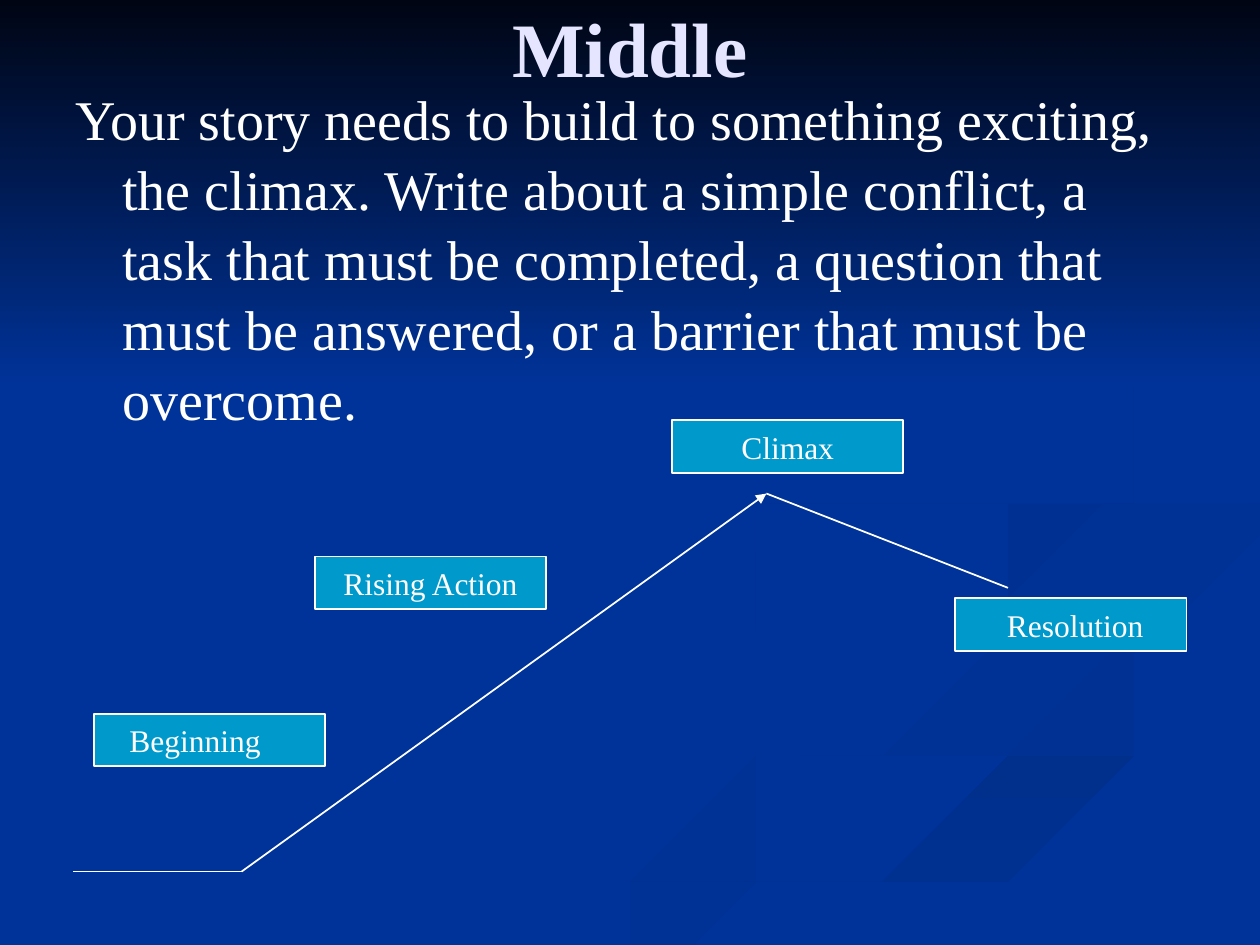
from lxml import etree
from pptx import Presentation
from pptx import util as u
from pptx.dml.color import RGBColor
from pptx.enum import shapes, text
from pptx.oxml.ns import qn

FONT = "Times New Roman"
WHITE = "FFFFFF"
BLUE = "003399"
STEPS = 5

RIBBONS = [
    (BLUE, "003193", 0, [
        (7.8, 5.53), (6.42, 5.07), (5.75, 4.6), (5.81, 4.84), (6.8, 5.19),
        (7.81, 5.56), (7.67, 5.87), (6.16, 6.29), (4.58, 6.74), (3, 7.49),
        (3.61, 7.49), (5.32, 6.74), (7.4, 6.18), (8, 5.81)]),
    (BLUE, "003193", 45, [
        (9.43, 5.7), (9.05, 5.4), (7.74, 5.03), (7.24, 4.64), (7.55, 5.05),
        (8.54, 5.39), (9.18, 5.81), (8.94, 6.05), (9.37, 5.86)]),
    ("002F8C", BLUE, 90, [
        (5.03, 7.49), (5.71, 7.49), (7.22, 6.82), (9.98, 6.09), (9.98, 5.81),
        (8.31, 6.29), (6.3, 6.93)]),
    ("003091", BLUE, 45, [
        (7.81, 4.6), (8.26, 4.96), (8.09, 4.66), (8.78, 4.39), (9.98, 4.2),
        (9.98, 4.02), (8.35, 4.3)]),
    ("002F8E", BLUE, 45, [
        (6.83, 4.3), (8.25, 4.02), (8.92, 3.54), (8.73, 2.99), (7.62, 2.33),
        (8.62, 2.92), (8.86, 3.48), (7.91, 3.92), (6.25, 4.26), (5.77, 4.62),
        (6.22, 5), (5.94, 4.65)]),
]

STAGES = [
    ("Beginning", 1.9, 14.39, 0.71),
    ("Rising Action", 6.35, 11.22, None),
    ("Climax", 13.55, 8.47, None),
    ("Resolution", 19.26, 12.06, 1.04),
]

START, TURN, PEAK, END = (1.48, 17.57), (4.87, 17.57), (15.45, 9.95), (20.32, 11.85)

STORY = ("Your story needs to build to something exciting, the climax. "
         "Write about a simple conflict, a task that must be completed, "
         "a question that must be answered, or a barrier that must be overcome.")


def color(value):
    return RGBColor.from_string(value)


def apply(target, values):
    for name, value in values.items():
        setattr(target, name, value)


def write(box, words, size, tint=WHITE, bold=False, **layout):
    frame = box.text_frame
    apply(frame, {"word_wrap": True, **layout})
    para = frame.paragraphs[0]
    span = para.add_run()
    span.text = words
    apply(span.font, {"name": FONT, "size": u.Pt(size), "bold": bold})
    span.font.color.rgb = color(tint)
    return para


def blend(a, b, c, d, t):
    return (b + t * (c - a) / 2 + t ** 2 * (2 * a - 5 * b + 4 * c - d) / 2
            + t ** 3 * (3 * b - a - 3 * c + d) / 2)


def smooth_loop(points):
    count = len(points)
    curve = []
    for i in range(count):
        near = [points[(i + k) % count] for k in (-1, 0, 1, 2)]
        for step in range(STEPS):
            x, y = (blend(*axis, step / STEPS) for axis in zip(*near))
            curve.append((min(x, 10), min(y, 7.5)))
    return curve


def shade(shape, first, last, angle):
    shape.shadow.inherit = False
    shape.line.fill.background()
    shape.fill.gradient()
    shape.fill.gradient_angle = -angle % 360
    for stop, tint in zip(shape.fill.gradient_stops, (first, last)):
        stop.color.rgb = color(tint)


def add_ribbon(page, first, last, angle, points):
    curve = smooth_loop(points)
    builder = page.shapes.build_freeform(*curve[0], scale=u.Cm(2.54))
    builder.add_line_segments(curve[1:], close=True)
    shade(builder.convert_to_shape(), first, last, angle)


def add_sky(page):
    sky = page.shapes.add_shape(shapes.MSO_SHAPE.RECTANGLE, 0, 0,
                                u.Cm(25.4), u.Cm(7.82))
    shade(sky, "000514", BLUE, 90)


def add_title(page, words):
    title = page.shapes.title
    title.element.getparent().append(title.element)
    apply(title, {"left": u.Cm(1.27), "top": u.Cm(-0.64),
                  "width": u.Cm(22.86), "height": u.Cm(3.18)})
    para = write(title, words, 44, "E5E5FF", True,
                 vertical_anchor=text.MSO_ANCHOR.MIDDLE)
    para.alignment = text.PP_ALIGN.CENTER


def add_story(page, words):
    box = page.shapes.add_textbox(u.Cm(1.27), u.Cm(1.53), u.Cm(22.86), u.Cm(12.57))
    para = write(box, words, 32)
    para.line_spacing = 1.04
    hanging = para._p.get_or_add_pPr()
    hanging.set("marL", str(u.Cm(0.95)))
    hanging.set("indent", str(u.Cm(-0.95)))


def add_stage(page, words, left, top, margin):
    box = page.shapes.add_shape(shapes.MSO_SHAPE.RECTANGLE, u.Cm(left), u.Cm(top),
                                u.Cm(4.66), u.Cm(1.06))
    box.shadow.inherit = False
    box.fill.solid()
    box.fill.fore_color.rgb = color("0099CC")
    box.line.color.rgb = color(WHITE)
    box.line.width = u.Pt(1)
    para = write(box, words, 18, vertical_anchor=text.MSO_ANCHOR.MIDDLE)
    if margin is None:
        para.alignment = text.PP_ALIGN.CENTER
    else:
        para.alignment = text.PP_ALIGN.LEFT
        box.text_frame.margin_left = u.Cm(margin)


def add_line(page, begin, end, arrow=False):
    line = page.shapes.add_connector(shapes.MSO_CONNECTOR.STRAIGHT,
                                     *map(u.Cm, begin + end))
    line.line.color.rgb = color(WHITE)
    line.line.width = u.Pt(1)
    if arrow:
        outline = line.element.spPr.find(qn("a:ln"))
        etree.SubElement(outline, qn("a:tailEnd"), type="triangle")
    etree.SubElement(line.element.spPr, qn("a:effectLst"))


def main():
    deck = Presentation()
    apply(deck, {"slide_width": u.Cm(25.4), "slide_height": u.Cm(19.05)})
    page = deck.slides.add_slide(deck.slide_layouts[5])
    page.background.fill.solid()
    page.background.fill.fore_color.rgb = color(BLUE)
    for ribbon in RIBBONS:
        add_ribbon(page, *ribbon)
    add_sky(page)
    add_title(page, "Middle")
    add_story(page, STORY)
    for stage in STAGES:
        add_stage(page, *stage)
    add_line(page, TURN, PEAK, arrow=True)
    add_line(page, PEAK, END)
    add_line(page, START, TURN)
    deck.save("out.pptx")


if __name__ == "__main__":
    main()
